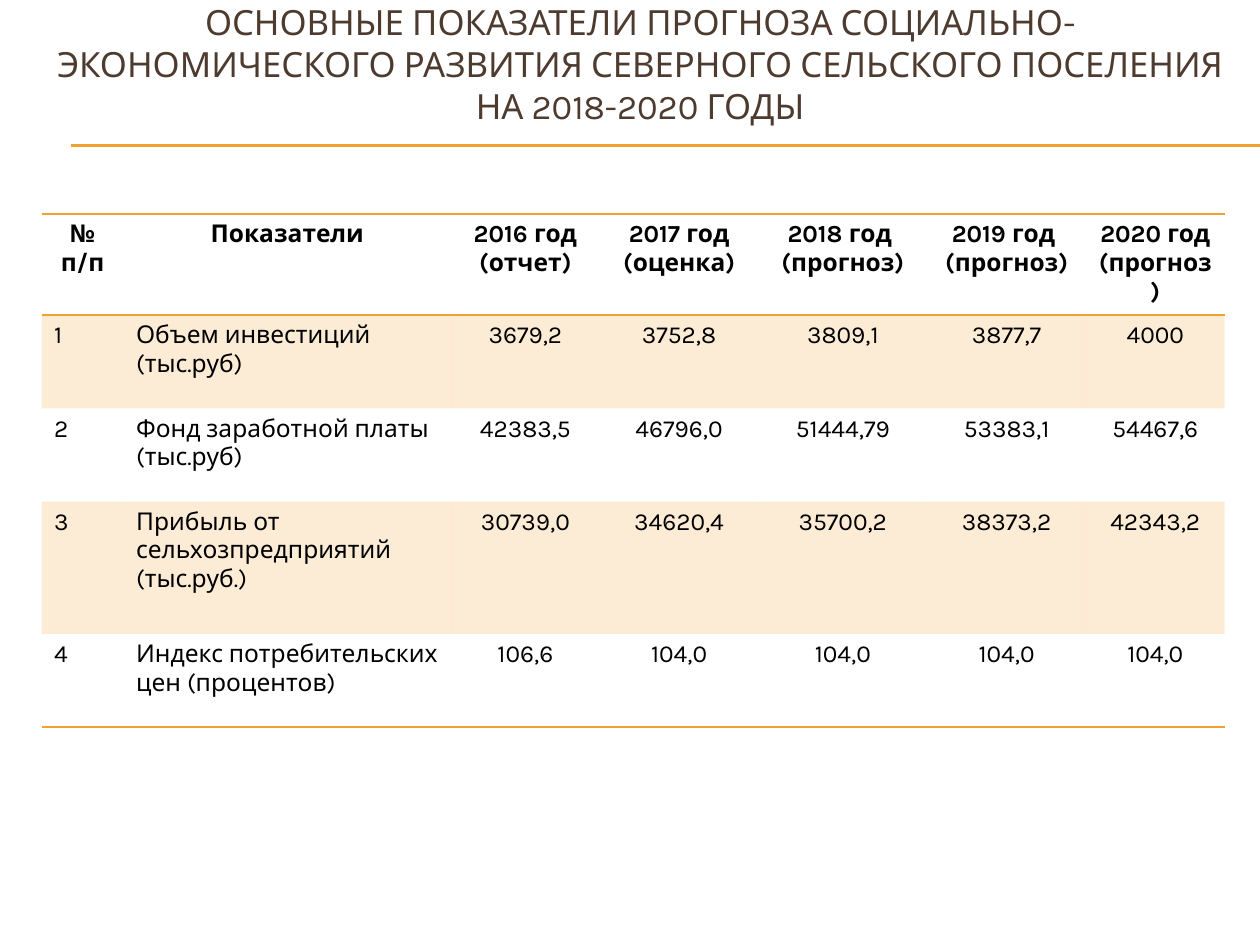
from dataclasses import dataclass
from lxml import etree
from pptx import Presentation, util as u
from pptx.dml.color import RGBColor
from pptx.enum import shapes, text
from pptx.oxml import ns


@dataclass
class Theme:
    font: str = "Karla"
    amber: str = "F0A22E"
    brown: str = "4E3B30"
    black: str = "000000"
    head: float = 19.8
    body: float = 14
    rule: float = 0.75
    edge: float = 1
    tint: int = 20
    plain: str = "{2D5ABB26-0587-4C30-8999-92F81FD0307C}"


class Page:
    def __init__(self, deck, theme):
        self.wide, self.high = deck.slide_width, deck.slide_height
        self.slide = deck.slides.add_slide(deck.slide_layouts[6])
        self.theme = theme

    def place(self, x, y, w, h):
        """Turn shares of the slide into lengths."""
        return [int(v * s) for v, s in zip((x, y, w, h), (self.wide, self.high) * 2)]

    def label(self, frame, words, size, color, bold=False, center=True):
        for i, line in enumerate(words.split("\n")):
            para = frame.paragraphs[0] if i == 0 else frame.add_paragraph()
            para.alignment = text.PP_ALIGN.CENTER if center else text.PP_ALIGN.LEFT
            run = para.add_run()
            run.text = line
            font = run.font
            font.name, font.size, font.bold = self.theme.font, u.Pt(size), bold
            font.color.rgb = RGBColor.from_string(color)

    def rule(self, x, y, end):
        line = self.slide.shapes.add_connector(
            shapes.MSO_CONNECTOR.STRAIGHT, *self.place(x, y, end, y))
        line.line.color.rgb = RGBColor.from_string(self.theme.amber)
        line.line.width = u.Pt(self.theme.rule)
        etree.SubElement(line._element.spPr, ns.qn("a:effectLst"))

    def title(self, words, *box):
        frame = self.slide.shapes.add_textbox(*self.place(*box)).text_frame
        frame.word_wrap = True
        frame.vertical_anchor = text.MSO_ANCHOR.MIDDLE
        frame.margin_bottom = u.Inches(0.55)  # lifts the text above the rule
        self.label(frame, words, self.theme.head, self.theme.brown)

    def border(self, cell, side):
        props = cell._tc.get_or_add_tcPr()
        line = etree.Element(ns.qn("a:ln" + side), w=str(u.Pt(self.theme.edge)))
        fill = etree.SubElement(line, ns.qn("a:solidFill"))
        etree.SubElement(fill, ns.qn("a:srgbClr"), val=self.theme.amber)
        props.insert(0, line)

    def shade(self, cell):
        cell.fill.solid()
        cell.fill.fore_color.rgb = RGBColor.from_string(self.theme.amber)
        color = cell._tc.tcPr.find(".//" + ns.qn("a:srgbClr"))
        etree.SubElement(color, ns.qn("a:alpha"), val=str(self.theme.tint * 1000))

    def table(self, rows, x, y, cols, highs):
        box = self.place(x, y, sum(cols) / 10, sum(highs) / 7.5)
        grid = self.slide.shapes.add_table(len(rows), len(cols), *box).table
        grid.first_row = grid.horz_banding = False
        grid._tbl.tblPr.find(ns.qn("a:tableStyleId")).text = self.theme.plain
        for col, wide in zip(grid.columns, cols):
            col.width = u.Inches(wide)
        for r, (row, high) in enumerate(zip(rows, highs)):
            grid.rows[r].height = u.Inches(high)
            for c, words in enumerate(row):
                cell = grid.cell(r, c)
                self.label(cell.text_frame, words, self.theme.body, self.theme.black,
                           bold=r == 0, center=r == 0 or c > 1)
                # Odd rows are tinted, the rest stay clear
                if r % 2:
                    self.shade(cell)
                else:
                    cell.fill.background()
                if r in (0, len(rows) - 1):
                    self.border(cell, "B")
                if r == 0:
                    self.border(cell, "T")


ROWS = [
    ["№ п/п", "Показатели", "2016 год (отчет)", "2017 год (оценка)"]
    + [f"{year} год \n(прогноз)" for year in (2018, 2019, 2020)],
    ["1", "Объем инвестиций (тыс.руб)", "3679,2", "3752,8", "3809,1", "3877,7", "4000"],
    ["2", "Фонд заработной платы (тыс.руб)",
     "42383,5", "46796,0", "51444,79", "53383,1", "54467,6"],
    ["3", "Прибыль от сельхозпредприятий (тыс.руб.)",
     "30739,0", "34620,4", "35700,2", "38373,2", "42343,2"],
    ["4", "Индекс потребительских цен (процентов)", "106,6"] + ["104,0"] * 4,
]


def main():
    deck = Presentation()
    deck.slide_width, deck.slide_height = u.Inches(10), u.Inches(7.5)
    page = Page(deck, Theme())

    # Double rule under the heading
    for y in (1.15, 1.16):
        page.rule(0.056, y / 7.5, 1)

    # Heading
    page.title("ОСНОВНЫЕ ПОКАЗАТЕЛИ ПРОГНОЗА СОЦИАЛЬНО-ЭКОНОМИЧЕСКОГО РАЗВИТИЯ "
               "СЕВЕРНОГО СЕЛЬСКОГО ПОСЕЛЕНИЯ НА 2018-2020 ГОДЫ",
               0.033, 0.36 / 7.5, 0.95, 0.79 / 7.5)

    # Forecast table
    page.table(ROWS, 0.033, 1.7 / 7.5,
               cols=[0.65, 2.6, 1.18, 1.26, 1.34, 1.26, 1.1],
               highs=[0.74, 0.74, 0.74, 1.05, 0.74])

    deck.save("out.pptx")


if __name__ == "__main__":
    main()
